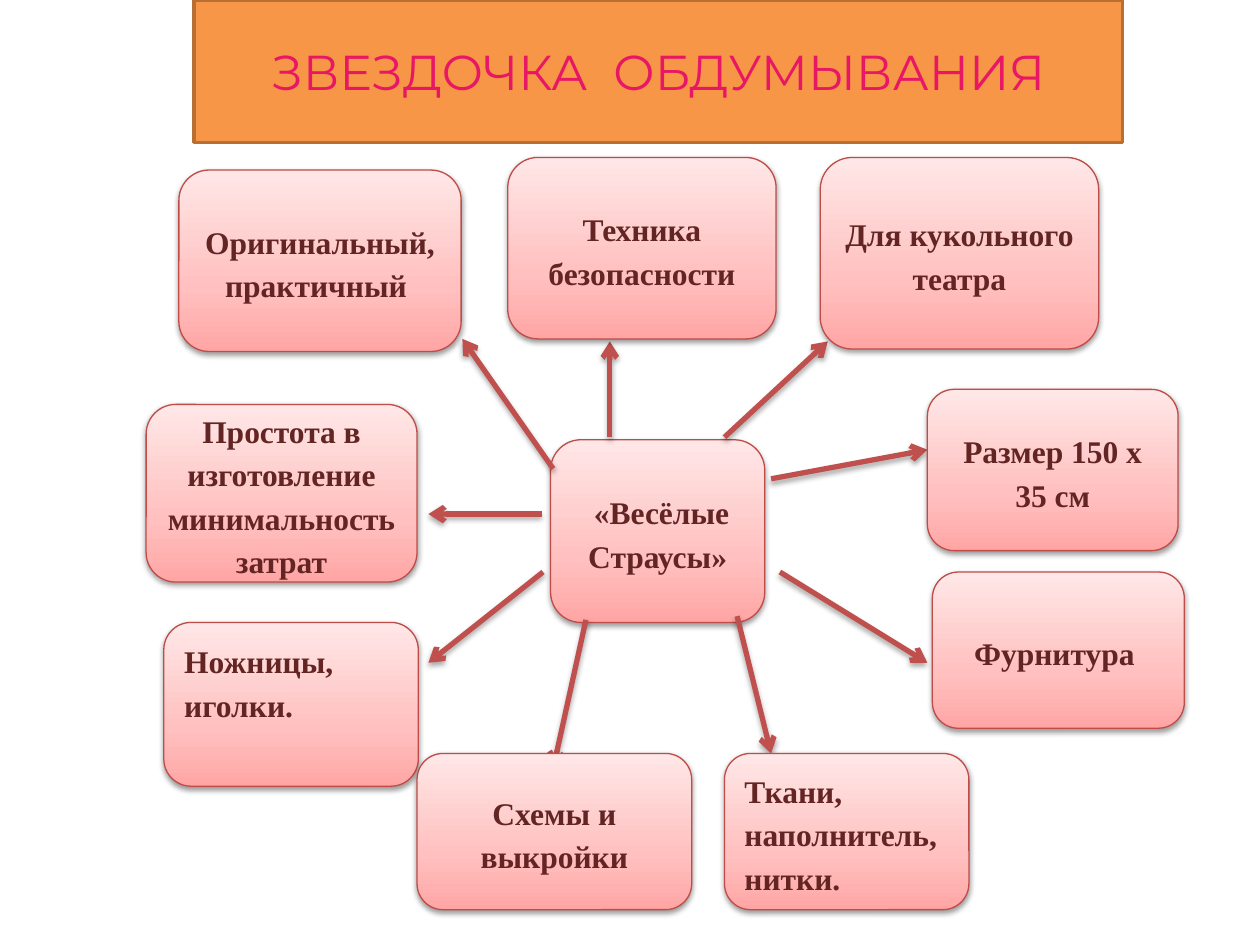
from lxml.etree import SubElement
from pptx import Presentation
from pptx.dml.color import RGBColor
from pptx.enum.shapes import MSO_CONNECTOR, MSO_SHAPE
from pptx.enum.text import MSO_ANCHOR, MSO_AUTO_SIZE, PP_ALIGN
from pptx.oxml.ns import qn
from pptx.util import Emu, Pt

PX = 9144
CENTER = (" «Весёлые Страусы»", (437, 349, 170, 145))
TOPICS = [
    ("Техника безопасности", (403, 125, 213, 144)),
    ("Простота в изготовление минимальность затрат", (116, 321, 215, 141)),
    ("Схемы и выкройки", (331, 598, 218, 124)),
    ("Оригинальный, практичный ", (142, 135, 224, 144)),
    ("Для кукольного театра", (651, 125, 221, 152)),
    ("Размер 150 x 35 см", (736, 309, 199, 128)),
    ("Фурнитура ", (740, 454, 200, 124)),
]
SUPPLIES = [
    ("Ножницы, иголки.", (130, 494, 202, 130), MSO_ANCHOR.TOP),
    ("Ткани, наполнитель, нитки.", (575, 598, 194, 124), MSO_ANCHOR.MIDDLE),
]
ARROWS = [
    (439, 372, 367, 269),
    (575, 347, 657, 271),
    (430, 408, 340, 408),
    (619, 454, 736, 526),
    (585, 489, 612, 598),
    (465, 492, 439, 610),
    (431, 454, 340, 526),
    (612, 380, 736, 357),
    (484, 347, 484, 271),
]
CARD_STOPS = [(0, "FFA6A5"), (35, "FFC0BF"), (100, "FFE7E7")]


def px(*lengths):
    return [Emu(length * PX) for length in lengths]


def color(value):
    return RGBColor.from_string(value)


def add_element(parent, tag, **attributes):
    values = {name: str(value) for name, value in attributes.items()}
    return SubElement(parent, qn(tag), values)


def fill_gradient(shape, stops):
    gradient = add_element(shape._element.spPr, "a:gradFill", rotWithShape=1)
    stop_list = add_element(gradient, "a:gsLst")
    for position, value in stops:
        stop = add_element(stop_list, "a:gs", pos=position * 1000)
        add_element(stop, "a:srgbClr", val=value)
    add_element(gradient, "a:lin", ang=16200000, scaled=0)


def set_line(shape, value, width):
    shape.line.color.rgb = color(value)
    shape.line.width = Pt(width)


def add_shadow(shape, distance, opacity):
    effects = add_element(shape._element.spPr, "a:effectLst")
    shadow = add_element(effects, "a:outerShdw", blurRad=40000, dist=distance,
                         dir=5400000, rotWithShape=0)
    tint = add_element(shadow, "a:srgbClr", val="000000")
    add_element(tint, "a:alpha", val=opacity * 1000)


def write(shape, text, *, font, size, ink, bold=False, align=PP_ALIGN.CENTER,
          anchor=MSO_ANCHOR.MIDDLE, spacing=1.0, after=0):
    frame = shape.text_frame
    frame.word_wrap = True
    frame.auto_size = MSO_AUTO_SIZE.NONE
    frame.vertical_anchor = anchor
    para = frame.paragraphs[0]
    para.alignment = align
    para.line_spacing = spacing
    para.space_after = Pt(after)
    span = para.add_run()
    span.text = text
    span.font.name = font
    span.font.size = Pt(size)
    span.font.bold = bold
    span.font.color.rgb = color(ink)


def place_banner(page, text, box):
    title = page.shapes.title
    title.left, title.top, title.width, title.height = px(*box)
    outline = add_element(title._element.spPr, "a:prstGeom", prst="horizontalScroll")
    add_element(outline, "a:avLst")
    title.fill.solid()
    title.fill.fore_color.rgb = color("F79646")
    set_line(title, "B76F34", 2)
    write(title, text, font="Montserrat", size=28, ink="E81766")


def place_card(page, text, box, **layout):
    card = page.shapes.add_shape(MSO_SHAPE.ROUNDED_RECTANGLE, *px(*box))
    fill_gradient(card, CARD_STOPS)
    set_line(card, "BF4C48", 0.75)
    add_shadow(card, 20000, 38)
    write(card, text, font="Times New Roman", size=18, ink="632523", bold=True,
          spacing=1.15, after=10, **layout)


def place_arrow(page, ends):
    arrow = page.shapes.add_connector(MSO_CONNECTOR.STRAIGHT, *px(*ends))
    set_line(arrow, "C0504D", 3)
    add_element(arrow.line._get_or_add_ln(), "a:tailEnd", type="arrow")
    add_shadow(arrow, 23000, 35)


def place_star(page):
    place_card(page, *CENTER)
    for ends in ARROWS:
        place_arrow(page, ends)
    for text, box, anchor in SUPPLIES:
        place_card(page, text, box, align=PP_ALIGN.LEFT, anchor=anchor)
    for text, box in TOPICS:
        place_card(page, text, box)


def main():
    deck = Presentation()
    deck.slide_width, deck.slide_height = px(1000, 750)
    page = deck.slides.add_slide(deck.slide_layouts[5])
    place_banner(page, "ЗВЕЗДОЧКА  ОБДУМЫВАНИЯ", (154, 0, 737, 113))
    place_star(page)
    deck.save("out.pptx")


if __name__ == "__main__":
    main()
